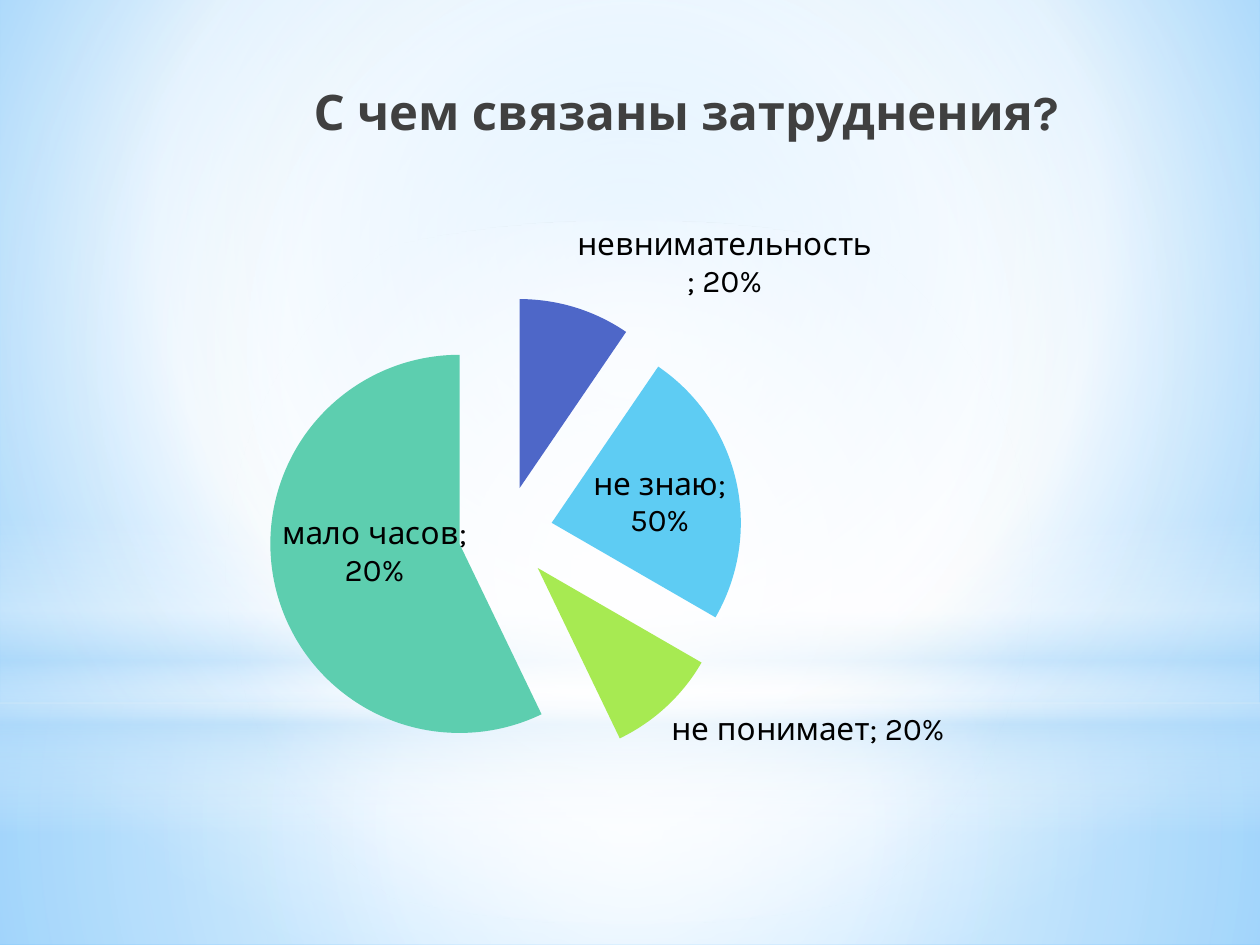
from dataclasses import dataclass

from lxml import etree
from pptx import Presentation
from pptx.chart.data import CategoryChartData
from pptx.dml.color import RGBColor
from pptx.enum.chart import XL_CHART_TYPE as CT, XL_LABEL_POSITION as LP
from pptx.enum.shapes import MSO_SHAPE as MS
from pptx.enum.text import MSO_ANCHOR, PP_ALIGN
from pptx.oxml import parse_xml
from pptx.oxml.ns import nsdecls, qn
from pptx.util import Inches, Pt


@dataclass(frozen=True)
class Theme:
    font: str = "Karla"
    title_size: int = 28
    label_size: int = 18
    title: str = "404040"
    label: str = "000000"
    white: str = "FFFFFF"
    haze: str = "B4DCFA"
    sky: str = "9ED5FF"
    deep: str = "5BB9FF"
    slices: tuple = ("4E67C8", "5ECCF3", "A7EA52", "5DCEAF")


CENTER = (50, 50, 50, 50)


def grad_xml(stops, to):
    gs = "".join(
        f'<a:gs pos="{pos * 1000}"><a:srgbClr val="{color}">'
        f'<a:alpha val="{alpha * 1000}"/></a:srgbClr></a:gs>'
        for pos, color, alpha in stops
    )
    if to:
        sides = " ".join(f'{k}="{v * 1000}"' for k, v in zip("ltrb", to))
        way = f'<a:path path="circle"><a:fillToRect {sides}/></a:path>'
    else:
        way = '<a:lin ang="5400000" scaled="0"/>'
    return (f'<a:gradFill {nsdecls("a")} rotWithShape="1">'
            f"<a:gsLst>{gs}</a:gsLst>{way}</a:gradFill>")


class Deck:
    def __init__(self, theme):
        self.theme = theme
        self.prs = Presentation()
        self.prs.slide_width, self.prs.slide_height = Inches(10), Inches(7.5)
        self.slide = self.prs.slides.add_slide(self.prs.slide_layouts[5])

    def style(self, font, size, color, bold=False):
        font.name, font.size, font.bold = self.theme.font, Pt(size), bold
        font.color.rgb = RGBColor.from_string(color)

    def background(self, stops, to):
        self.slide.background.fill.solid()
        bg = self.slide.background.fill._xPr
        bg.replace(bg.find(qn("a:solidFill")), parse_xml(grad_xml(stops, to)))

    def glow(self, kind, top, height, stops, to=CENTER):
        s = self.slide.shapes.add_shape(
            kind, 0, Inches(top), self.prs.slide_width, Inches(height))
        s.shadow.inherit = False
        s.line.fill.background()
        s.fill.solid()
        pr = s._element.spPr
        pr.replace(pr.find(qn("a:solidFill")), parse_xml(grad_xml(stops, to)))

    def title(self, text, x, y, w, h):
        sp = self.slide.shapes.title
        sp.left, sp.top, sp.width, sp.height = map(Inches, (x, y, w, h))
        self.slide.shapes._spTree.append(sp._element)
        tf = sp.text_frame
        tf.word_wrap = True
        tf.vertical_anchor = MSO_ANCHOR.TOP
        p = tf.paragraphs[0]
        p.alignment = PP_ALIGN.RIGHT
        r = p.add_run()
        r.text = text
        self.style(r.font, self.theme.title_size, self.theme.title, True)

    def pie(self, points, box, plot, explosion, custom):
        t = self.theme
        data = CategoryChartData(number_format="0%")
        data.categories = list(points)
        data.add_series("Series 1", list(points.values()))
        chart = self.slide.shapes.add_chart(
            CT.PIE, *map(Inches, box), data).chart
        chart.has_legend = chart.has_title = False
        self.style(chart.font, t.label_size, t.label)
        pie = chart.plots[0]
        pie.vary_by_categories = True
        ser = pie.series[0]
        for i, color in enumerate(t.slices):
            fill = ser.points[i].format.fill
            fill.solid()
            fill.fore_color.rgb = RGBColor.from_string(color)
        node = etree.Element(qn("c:explosion"), val=str(explosion))
        ser._element.find(qn("c:dPt")).addprevious(node)
        labels = ser.data_labels
        labels.show_value = labels.show_category_name = True
        labels.show_percentage = False
        labels.number_format, labels.number_format_is_linked = "0%", False
        labels.position = LP.BEST_FIT
        self.style(labels.font, t.label_size, t.label)
        for i, text in custom.items():
            label = ser.points[i].data_label
            r = label.text_frame.paragraphs[0].add_run()
            r.text = text
            self.style(r.font, t.label_size, t.label)
            label.position = LP.BEST_FIT
        self.plot_layout(chart, plot)

    def plot_layout(self, chart, plot):
        area = chart._chartSpace.chart.plotArea
        for old in area.findall(qn("c:layout")):
            area.remove(old)
        sizes = "".join(f'<c:{k} val="{v}"/>' for k, v in zip("xywh", plot))
        area.insert(0, parse_xml(
            f'<c:layout {nsdecls("c")}><c:manualLayout>'
            '<c:layoutTarget val="inner"/><c:xMode val="edge"/>'
            f'<c:yMode val="edge"/>{sizes}</c:manualLayout></c:layout>'))


def main():
    t = Theme()
    deck = Deck(t)
    deck.background([(0, t.sky, 100), (60, t.white, 100), (100, t.deep, 100)],
                    (20, 10, 20, 60))
    deck.glow(MS.RECTANGLE, 5.58, 1.92,
              [(0, t.white, 91), (37, t.white, 76), (100, t.haze, 79)])
    deck.glow(MS.RECTANGLE, 0, 5.58,
              [(0, t.white, 89), (48, t.white, 62), (100, t.haze, 79)])
    deck.glow(MS.RECTANGLE, 4.12, 2.5,
              [(0, t.white, 0), (29, t.white, 30), (45, t.haze, 40),
               (55, t.white, 26), (65, t.haze, 60), (100, t.white, 0)], None)
    deck.glow(MS.OVAL, 1.75, 5.58, [(0, t.white, 100), (56, t.white, 0)])
    deck.title("С чем связаны затруднения?", 1.38, 0.6, 7.12, 1.25)
    deck.pie({"невнимательность": 0.2, "не знаю": 0.5,
              "не понимает": 0.2, "мало часов": 1.2},
             box=(0.03, 1.55, 11.89, 4.75), plot=(0.03, 0.17, 0.61, 0.79),
             explosion=25, custom={3: "мало часов; 20%"})
    deck.prs.save("out.pptx")


if __name__ == "__main__":
    main()
